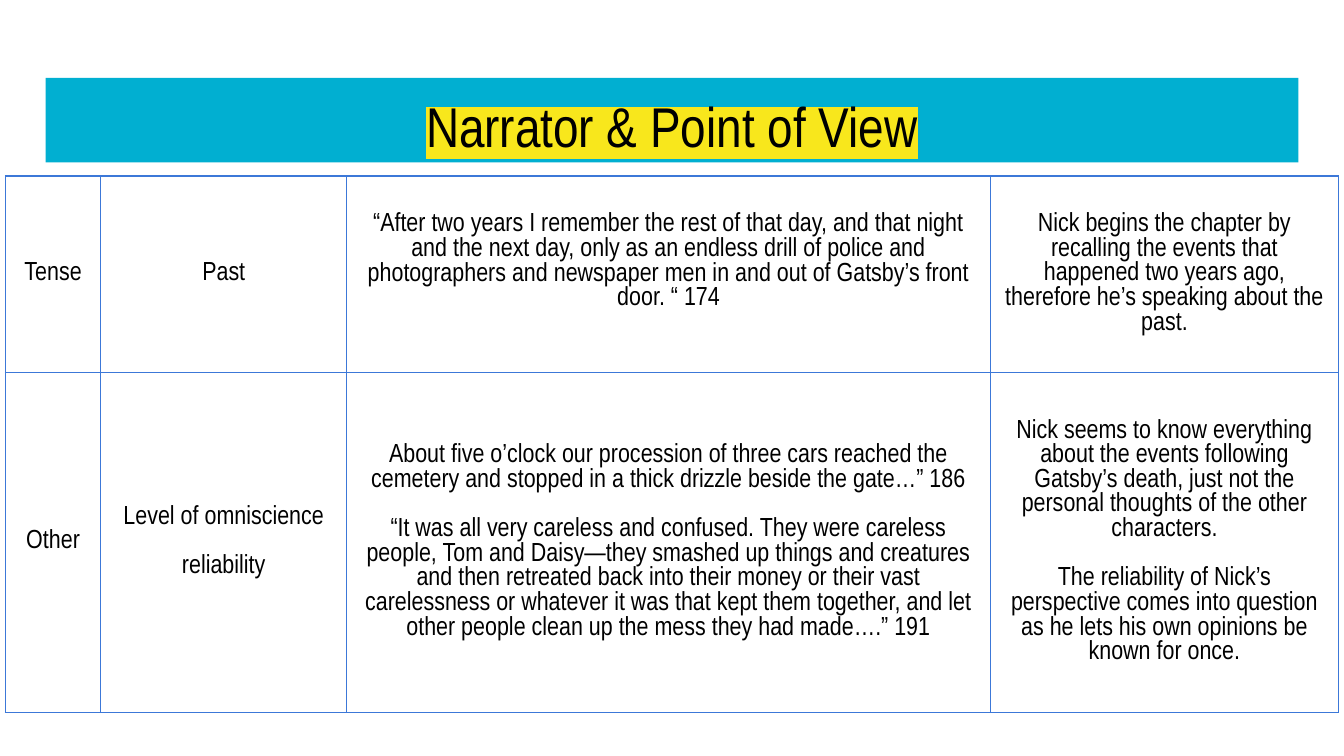
from dataclasses import dataclass

from lxml import etree
from pptx import Presentation
from pptx import util as u
from pptx.dml.color import RGBColor
from pptx.enum import shapes, text
from pptx.oxml import ns


@dataclass(frozen=True)
class Theme:
    font: str = "Arial Narrow"
    ink: str = "000000"
    banner: str = "01AFD1"
    highlight: str = "F8E71C"
    border: str = "3C78D8"
    title_size: float = 30
    body_size: float = 14
    paragraph_gap: float = 13.2
    border_width: float = 0.75


theme = Theme()


def write_text(frame, content, size=theme.body_size, highlight=None):
    for index, line in enumerate(content.split("\n")):
        paragraph = frame.add_paragraph() if index else frame.paragraphs[0]
        paragraph.alignment = text.PP_ALIGN.CENTER
        paragraph.space_before = u.Pt(theme.paragraph_gap if index else 0)
        run = paragraph.add_run()
        run.text = line
        run.font.size = u.Pt(size)
        run.font.color.rgb = RGBColor.from_string(theme.ink)
        if highlight:
            mark = etree.SubElement(run.font._element, ns.qn("a:highlight"))
            etree.SubElement(mark, ns.qn("a:srgbClr"), val=highlight)
        run.font.name = theme.font


def draw_borders(cell):
    properties = cell._tc.get_or_add_tcPr()
    for side in ("lnL", "lnR", "lnT", "lnB"):
        line = etree.SubElement(properties, ns.qn(f"a:{side}"), w=str(u.Pt(theme.border_width)))
        fill = etree.SubElement(line, ns.qn("a:solidFill"))
        etree.SubElement(fill, ns.qn("a:srgbClr"), val=theme.border)


presentation = Presentation()
presentation.slide_width = u.Inches(10)
presentation.slide_height = u.Inches(10) * 9 // 16
slide = presentation.slides.add_slide(presentation.slide_layouts[6])

column_widths = [0.71, 1.83, 4.79, 2.59]
row_heights = [1.46, 2.53]
rows = [
    [
        "Tense",
        "Past",
        "“After two years I remember the rest of that day, and that night and the next day, "
        "only as an endless drill of police and photographers and newspaper men in and out of "
        "Gatsby’s front door. “ 174",
        "Nick begins the chapter by recalling the events that happened two years ago, "
        "therefore he’s speaking about the past.",
    ],
    [
        "Other",
        "Level of omniscience\nreliability",
        "About five o’clock our procession of three cars reached the cemetery and stopped in a "
        "thick drizzle beside the gate…” 186\n"
        "“It was all very careless and confused. They were careless people, Tom and Daisy—they "
        "smashed up things and creatures and then retreated back into their money or their vast "
        "carelessness or whatever it was that kept them together, and let other people clean up "
        "the mess they had made….” 191",
        "Nick seems to know everything about the events following Gatsby’s death, just not the "
        "personal thoughts of the other characters.\n"
        "The reliability of Nick’s perspective comes into question as he lets his own opinions "
        "be known for once.",
    ],
]

table = slide.shapes.add_table(
    len(row_heights), len(column_widths), u.Inches(0.04), u.Inches(1.31),
    u.Inches(sum(column_widths)), u.Inches(sum(row_heights)),
).table
table.first_row = False
table.horz_banding = False
for column, width in zip(table.columns, column_widths):
    column.width = u.Inches(width)
for row, height, contents in zip(table.rows, row_heights, rows):
    row.height = u.Inches(height)
    for cell, content in zip(row.cells, contents):
        cell.margin_left = cell.margin_right = u.Inches(0.1)
        cell.margin_top = cell.margin_bottom = u.Inches(0.1)
        cell.vertical_anchor = text.MSO_ANCHOR.MIDDLE
        draw_borders(cell)
        cell.fill.background()
        write_text(cell.text_frame, content)

tense_quote = table.cell(0, 2)
tense_quote.margin_bottom = u.Inches(0.28)

title = slide.shapes.add_shape(
    shapes.MSO_SHAPE.RECTANGLE,
    u.Inches(0.34), u.Inches(0.58), u.Inches(9.32), u.Inches(0.63),
)
title.shadow.inherit = False
title.fill.solid()
title.fill.fore_color.rgb = RGBColor.from_string(theme.banner)
title.line.fill.background()
frame = title.text_frame
frame.word_wrap = True
frame.vertical_anchor = text.MSO_ANCHOR.TOP
frame.margin_left = frame.margin_right = u.Inches(0.1)
frame.margin_top = frame.margin_bottom = u.Inches(0.1)
write_text(frame, "Narrator & Point of View", size=theme.title_size, highlight=theme.highlight)

presentation.save("out.pptx")
